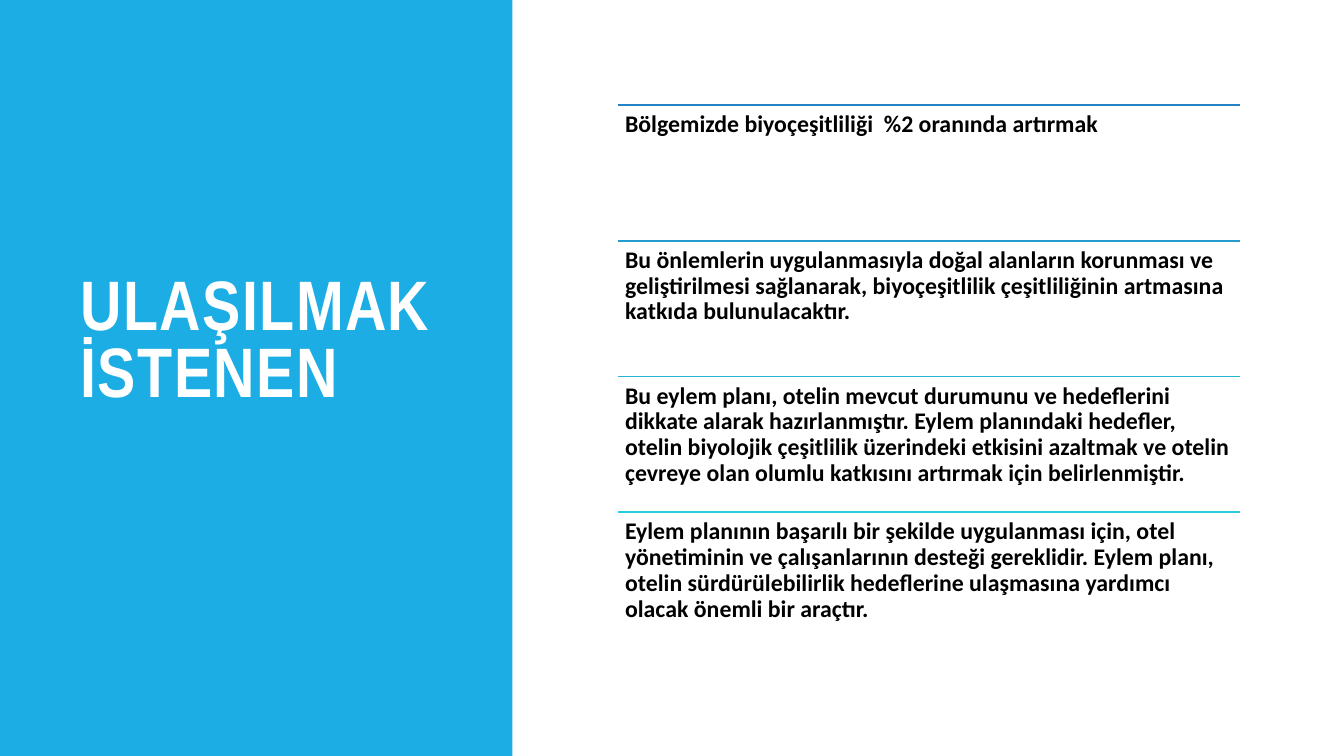
from dataclasses import dataclass

from lxml import etree
from pptx import Presentation
from pptx.dml.color import RGBColor
from pptx.enum.shapes import MSO_CONNECTOR, MSO_SHAPE
from pptx.enum.text import MSO_ANCHOR, MSO_AUTO_SIZE, PP_ALIGN
from pptx.oxml.ns import qn
from pptx.util import Pt

RECTANGLE = MSO_SHAPE.RECTANGLE
STRAIGHT = MSO_CONNECTOR.STRAIGHT
TOP, MIDDLE = MSO_ANCHOR.TOP, MSO_ANCHOR.MIDDLE
LEFT = PP_ALIGN.LEFT
NO_FIT = MSO_AUTO_SIZE.NONE

HEADING = "ULAŞILMAK İSTENEN"
GOALS = [
    ("Bölgemizde biyoçeşitliliği  %2 oranında artırmak", "2683C6"),
    ("Bu önlemlerin uygulanmasıyla doğal alanların korunması ve geliştirilmesi "
     "sağlanarak, biyoçeşitlilik çeşitliliğinin artmasına katkıda bulunulacaktır.",
     "269BCC"),
    ("Bu eylem planı, otelin mevcut durumunu ve hedeflerini dikkate alarak "
     "hazırlanmıştır. Eylem planındaki hedefler, otelin biyolojik çeşitlilik "
     "üzerindeki etkisini azaltmak ve otelin çevreye olan olumlu katkısını "
     "artırmak için belirlenmiştir.", "27B4D1"),
    ("Eylem planının başarılı bir şekilde uygulanması için, otel yönetiminin ve "
     "çalışanlarının desteği gereklidir. Eylem planı, otelin sürdürülebilirlik "
     "hedeflerine ulaşmasına yardımcı olacak önemli bir araçtır.", "27CED7"),
]


@dataclass(frozen=True)
class Theme:
    panel: str = "1CADE4"
    heading: str = "FFFFFF"
    goal: str = "000000"
    heading_font: str = "Arial Narrow"
    goal_font: str = "Calibri"
    heading_size: int = 50
    goal_size: int = 17
    rule_width: float = 1.25


THEME = Theme()
SLIDE_WIDTH, SLIDE_HEIGHT = 960, 540
PANEL_WIDTH = 366
HEADING_BOX = (50.4, 50.4, 269.3, 438.5)
HEADING_BOTTOM_INSET = 51.6
GOAL_LEFT, GOAL_WIDTH = 441.4, 444.2
GOAL_TOP, GOAL_HEIGHT = 74.9, 97
GOAL_INSET = 5.1


def write(frame, wording, font_name, size, color, spacing, anchor):
    frame.text = wording
    frame.word_wrap = True
    frame.auto_size = NO_FIT
    frame.vertical_anchor = anchor
    paragraph = frame.paragraphs[0]
    paragraph.alignment = LEFT
    paragraph.line_spacing = spacing
    run = paragraph.runs[0]
    run.font.name = font_name
    run.font.size = Pt(size)
    run.font.bold = True
    run.font.color.rgb = RGBColor.from_string(color)
    return run


def add_heading(slide):
    heading = slide.shapes.title
    heading.left, heading.top, heading.width, heading.height = map(Pt, HEADING_BOX)
    frame = heading.text_frame
    run = write(frame, HEADING, THEME.heading_font, THEME.heading_size,
                THEME.heading, 0.8, MIDDLE)
    run.font._element.set("spc", "100")
    frame.margin_bottom = Pt(HEADING_BOTTOM_INSET)

    panel = slide.shapes.add_shape(RECTANGLE, 0, 0, Pt(PANEL_WIDTH), Pt(SLIDE_HEIGHT))
    panel.shadow.inherit = False
    panel.fill.solid()
    panel.fill.fore_color.rgb = RGBColor.from_string(THEME.panel)
    panel.line.fill.background()
    heading.element.addprevious(panel.element)


def add_goal(slide, index, wording, color):
    top = Pt(GOAL_TOP + index * GOAL_HEIGHT)
    rule = slide.shapes.add_connector(
        STRAIGHT, Pt(GOAL_LEFT), top, Pt(GOAL_LEFT + GOAL_WIDTH), top)
    rule.line.color.rgb = RGBColor.from_string(color)
    rule.line.width = Pt(THEME.rule_width)
    etree.SubElement(rule.element.spPr, qn("a:effectLst"))

    goal = slide.shapes.add_textbox(Pt(GOAL_LEFT), top, Pt(GOAL_WIDTH), Pt(GOAL_HEIGHT))
    frame = goal.text_frame
    frame.margin_left = frame.margin_right = Pt(GOAL_INSET)
    frame.margin_top = frame.margin_bottom = Pt(GOAL_INSET)
    write(frame, wording, THEME.goal_font, THEME.goal_size, THEME.goal, 0.9, TOP)


def main():
    deck = Presentation()
    deck.slide_width, deck.slide_height = Pt(SLIDE_WIDTH), Pt(SLIDE_HEIGHT)
    slide = deck.slides.add_slide(deck.slide_layouts.get_by_name("Title Only"))
    add_heading(slide)
    for index, (wording, color) in enumerate(GOALS):
        add_goal(slide, index, wording, color)
    deck.save("out.pptx")


if __name__ == "__main__":
    main()
